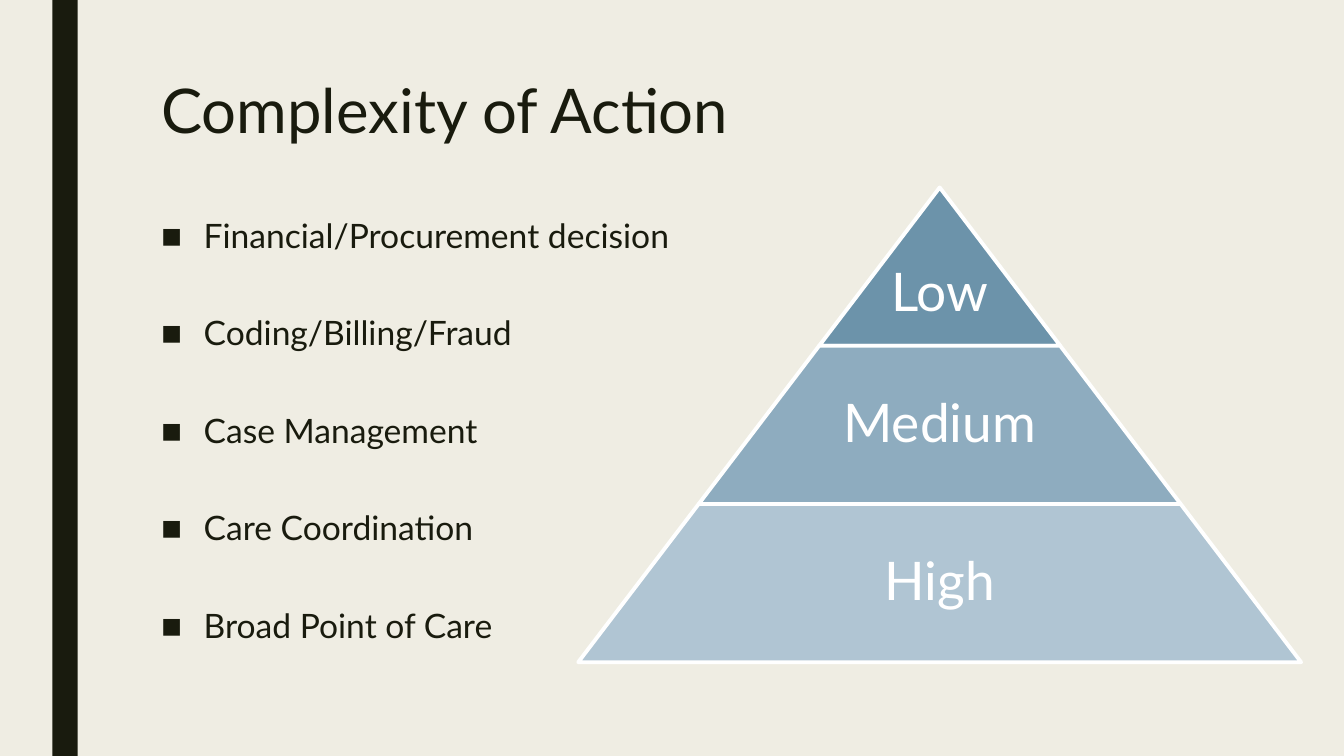
from dataclasses import dataclass

from lxml.etree import SubElement
from pptx import Presentation
from pptx.dml.color import RGBColor
from pptx.enum.shapes import MSO_SHAPE
from pptx.enum.text import MSO_ANCHOR, MSO_AUTO_SIZE, PP_ALIGN
from pptx.oxml.ns import qn
from pptx.util import Inches, Pt


@dataclass(frozen=True)
class Theme:
    font: str = "Lato"
    background: str = "EFEDE3"
    dark: str = "191B0E"
    white: str = "FFFFFF"
    levels: tuple = ("6C93AA", "8EACBF", "B0C5D3")
    title_size: int = 44
    body_size: int = 24
    level_size: int = 38
    bullet_percent: int = 65


theme = Theme()


def write_text(paragraph, text, size, color=theme.dark, align=PP_ALIGN.LEFT,
               line_spacing=0.9, before=0, after=0, bullet=None, indent=0.42):
    paragraph.alignment = align
    paragraph.line_spacing = line_spacing
    paragraph.space_before = Pt(before)
    paragraph.space_after = Pt(after)
    run = paragraph.add_run()
    run.text = text
    run.font.name = theme.font
    run.font.size = Pt(size)
    run.font.color.rgb = RGBColor.from_string(color)
    if bullet:
        properties = paragraph._p.get_or_add_pPr()
        properties.set("marL", str(Inches(indent)))
        properties.set("indent", str(-Inches(indent)))
        SubElement(properties, qn("a:buSzPct")).set("val", str(theme.bullet_percent * 1000))
        SubElement(properties, qn("a:buFont")).set("typeface", theme.font)
        SubElement(properties, qn("a:buChar")).set("char", bullet)


def place(shape, left, top, width, height):
    shape.left, shape.top = Inches(left), Inches(top)
    shape.width, shape.height = Inches(width), Inches(height)
    frame = shape.text_frame
    frame.word_wrap = True
    frame.auto_size = MSO_AUTO_SIZE.NONE
    frame.vertical_anchor = MSO_ANCHOR.TOP
    return frame


# Slide and background
presentation = Presentation()
presentation.slide_width = Inches(13.33)
presentation.slide_height = Inches(7.5)
slide = presentation.slides.add_slide(presentation.slide_layouts[1])
slide.background.fill.solid()
slide.background.fill.fore_color.rgb = RGBColor.from_string(theme.background)

# Vertical bar on the left
bar = slide.shapes.add_shape(MSO_SHAPE.RECTANGLE, Inches(0.52), 0, Inches(0.25), Inches(7.5))
bar.shadow.inherit = False
bar.fill.solid()
bar.fill.fore_color.rgb = RGBColor.from_string(theme.dark)
bar.line.fill.background()

# Title
title_frame = place(slide.shapes.title, 1.5, 0.75, 10.5, 1.62)
write_text(title_frame.paragraphs[0], "Complexity of Action", theme.title_size, line_spacing=0.89)

# Bulleted list
actions = [
    "Financial/Procurement decision",
    "Coding/Billing/Fraud",
    "Case Management",
    "Care Coordination",
    "Broad Point of Care",
]
body_frame = place(slide.placeholders[1], 1.5, 1.68, 11.14, 4.8)
for index, action in enumerate(actions):
    paragraph = body_frame.add_paragraph() if index else body_frame.paragraphs[0]
    write_text(paragraph, action, theme.body_size, line_spacing=2, before=10, after=2, bullet="■")

# Pyramid: each level is one step wider than the level above
center, pyramid_top, level_height, width_step = 9.32, 1.86, 1.57, 2.39
label_shares = (1, 0.65, 0.65)
label_offsets = (0.55, 0, 0)  # the apex label sits low, where the triangle is wide enough
for index, label in enumerate(("Low", "Medium", "High")):
    width = width_step * (index + 1)
    top = pyramid_top + level_height * index
    level = slide.shapes.add_shape(
        MSO_SHAPE.TRAPEZOID, Inches(center - width / 2), Inches(top),
        Inches(width), Inches(level_height))
    level.adjustments[0] = width_step / 2 / level_height
    level.shadow.inherit = False
    level.fill.solid()
    level.fill.fore_color.rgb = RGBColor.from_string(theme.levels[index])
    level.line.color.rgb = RGBColor.from_string(theme.white)
    level.line.width = Pt(2.75)

    # Label over the level
    label_width = width * label_shares[index]
    offset = label_offsets[index]
    label_box = slide.shapes.add_textbox(0, 0, 0, 0)
    label_frame = place(label_box, center - label_width / 2, top + offset,
                        label_width, level_height - offset)
    label_frame.vertical_anchor = MSO_ANCHOR.MIDDLE
    label_frame.margin_left = label_frame.margin_right = Inches(0.05)
    write_text(label_frame.paragraphs[0], label, theme.level_size,
               color=theme.white, align=PP_ALIGN.CENTER)

presentation.save("out.pptx")
